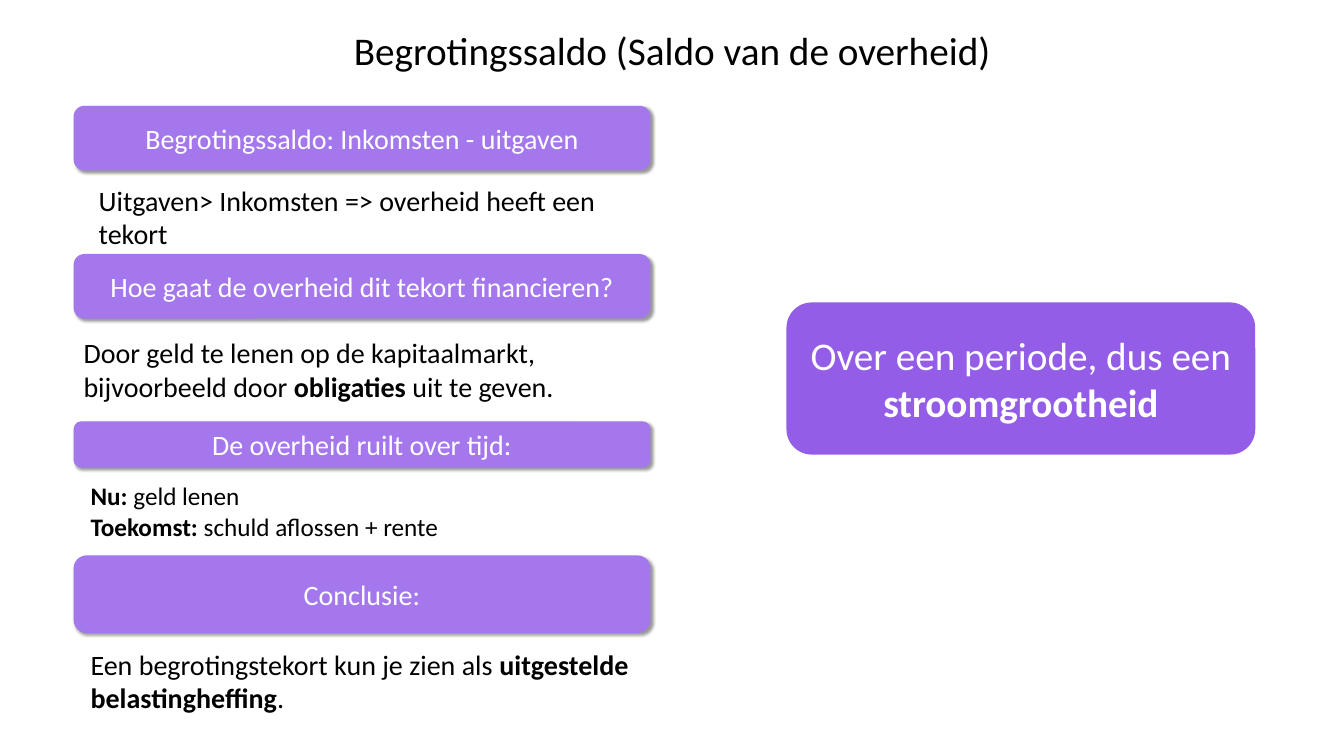
from lxml import etree
from pptx import Presentation
from pptx.dml.color import RGBColor
from pptx.enum.shapes import MSO_SHAPE as SHAPE
from pptx.enum.text import MSO_ANCHOR as ANCHOR, MSO_AUTO_SIZE as AUTOSIZE, PP_ALIGN as ALIGN
from pptx.oxml.ns import qn
from pptx.util import Inches, Pt

BLACK = RGBColor(0x00, 0x00, 0x00)
WHITE = RGBColor(0xFF, 0xFF, 0xFF)
LILAC = RGBColor(0xA4, 0x78, 0xEC)
PURPLE = RGBColor(0x94, 0x5D, 0xE8)
FONT = "Calibri"
LEFT, WIDTH = 0.73, 5.72


class SlideBuilder:
    """Text is a list of paragraphs; each is a list of (text, bold) runs."""

    def __init__(self, slide):
        self.s = slide

    def add_runs(self, sp, paragraphs, size, color, align, anchor):
        tf = sp.text_frame
        tf.word_wrap = True
        tf.auto_size = AUTOSIZE.NONE
        tf.vertical_anchor = anchor
        for i, runs in enumerate(paragraphs):
            p = tf.add_paragraph() if i else tf.paragraphs[0]
            p.alignment = align
            for text, bold in runs:
                r = p.add_run()
                r.text = text
                r.font.name = FONT
                r.font.size = Pt(size)
                r.font.bold = bold
                r.font.color.rgb = color

    def title(self, text, left, top, width, height):
        sp = self.s.shapes.title
        sp.left, sp.top, sp.width, sp.height = map(Inches, (left, top, width, height))
        self.add_runs(sp, [[(text, False)]], 28, BLACK, ALIGN.CENTER, ANCHOR.TOP)

    def box(self, kind, paragraphs, left, top, width, height, fill, size):
        sp = self.s.shapes.add_shape(kind, *map(Inches, (left, top, width, height)))
        sp.shadow.inherit = False
        sp.fill.solid()
        sp.fill.fore_color.rgb = fill
        sp.line.fill.background()
        self.add_runs(sp, paragraphs, size, WHITE, ALIGN.CENTER, ANCHOR.MIDDLE)
        return sp

    def heading(self, text, top, height):
        sp = self.box(SHAPE.ROUNDED_RECTANGLE, [[(text, False)]],
                      LEFT, top, WIDTH, height, LILAC, 20)
        # Soft shadow to the lower right
        effects = sp._element.spPr.find(qn("a:effectLst"))
        shadow = etree.SubElement(effects, qn("a:outerShdw"), blurRad=str(Pt(2)),
                                  dist=str(Pt(2)), dir="2700000", algn="tl", rotWithShape="0")
        color = etree.SubElement(shadow, qn("a:srgbClr"), val=str(BLACK))
        etree.SubElement(color, qn("a:alpha"), val="40000")

    def text(self, paragraphs, left, top, width, height, size):
        sp = self.s.shapes.add_textbox(*map(Inches, (left, top, width, height)))
        self.add_runs(sp, paragraphs, size, BLACK, ALIGN.LEFT, ANCHOR.TOP)


# Each section: heading, its top and height, then its text, position and size
SECTIONS = [
    ("Begrotingssaldo: Inkomsten - uitgaven", 1.05, 0.64,
     [[("Uitgaven> Inkomsten => overheid heeft een tekort", False)]],
     (0.88, 1.77, 5.65, 0.77), 20),
    ("Hoe gaat de overheid dit tekort financieren?", 2.52, 0.64,
     [[("Door geld te lenen op de kapitaalmarkt, bijvoorbeeld door ", False),
       ("obligaties", True), (" uit te geven.", False)]],
     (0.73, 3.28, 5.82, 0.77), 20),
    ("De overheid ruilt over tijd:", 4.18, 0.46,
     [[("Nu:", True), (" geld lenen", False)],
      [("Toekomst: ", True), ("schuld aflossen + rente", False)]],
     (0.8, 4.72, 5.58, 0.71), 18),
    ("Conclusie:", 5.51, 0.77,
     [[("Een begrotingstekort kun je zien als ", False),
       ("uitgestelde belastingheffing", True), (".", False)]],
     (0.8, 6.37, 5.58, 0.77), 20),
]


def main():
    prs = Presentation()
    prs.slide_width, prs.slide_height = Inches(13.33), Inches(7.5)
    b = SlideBuilder(prs.slides.add_slide(prs.slide_layouts[5]))

    # Title
    b.title("Begrotingssaldo (Saldo van de overheid)", 2.34, 0.21, 8.65, 0.57)

    # Left column: headings with explanations
    for heading, top, height, paragraphs, place, size in SECTIONS:
        b.heading(heading, top, height)
        b.text(paragraphs, *place, size)

    # Right: key message
    b.box(SHAPE.FLOWCHART_ALTERNATE_PROCESS,
          [[("Over een periode, dus een ", False), ("stroomgrootheid", True)]],
          7.8, 3, 4.65, 1.51, PURPLE, 28)

    prs.save("out.pptx")


if __name__ == "__main__":
    main()
